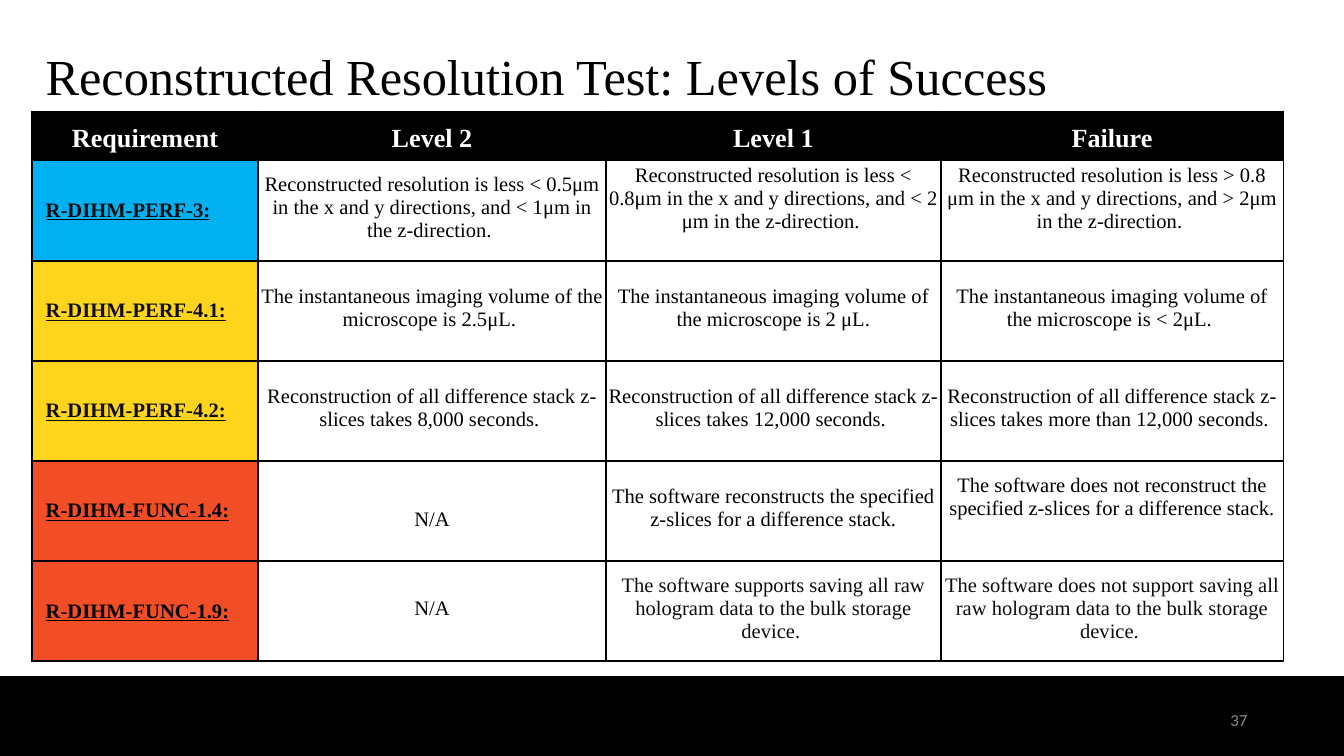
from lxml.etree import SubElement
from pptx import Presentation
from pptx.dml.color import RGBColor
from pptx.enum.shapes import MSO_SHAPE as Shape
from pptx.enum.text import MSO_ANCHOR as Anchor, PP_ALIGN as Align
from pptx.oxml.ns import qn
from pptx.util import Inches, Pt

BLACK = RGBColor(0, 0, 0)
WHITE = RGBColor(255, 255, 255)
INK = RGBColor(0x0D, 0x0D, 0x0D)
GRAY = RGBColor(0x88, 0x88, 0x88)
BLUE = RGBColor(0x00, 0xB0, 0xF0)
YELLOW = RGBColor(0xFE, 0xD4, 0x1D)
ORANGE = RGBColor(0xF1, 0x4E, 0x28)

TITLE = "Reconstructed Resolution Test: Levels of Success"
PAGE = "37"
HEADINGS = ["Requirement", "Level 2", "Level 1", "Failure"]
REQUIREMENTS = [
    ("R-DIHM-PERF-3:", BLUE, [
        "Reconstructed resolution is less < 0.5μm in the x and y directions, and < 1μm in the z-direction. ",
        "Reconstructed resolution is less < 0.8μm in the x and y directions, and < 2 μm in the z-direction. ",
        "Reconstructed resolution is less > 0.8 μm in the x and y directions, and > 2μm in the z-direction. "]),
    ("R-DIHM-PERF-4.1:", YELLOW, [
        "The instantaneous imaging volume of the microscope is 2.5μL. ",
        "The instantaneous imaging volume of the microscope is 2 μL.",
        "The instantaneous imaging volume of the microscope is < 2μL. "]),
    ("R-DIHM-PERF-4.2:", YELLOW, [
        "Reconstruction of all difference stack z-slices takes 8,000 seconds. ",
        "Reconstruction of all difference stack z-slices takes 12,000 seconds. ",
        "Reconstruction of all difference stack z-slices takes more than 12,000 seconds. "]),
    ("R-DIHM-FUNC-1.4:", ORANGE, [
        "N/A",
        "The software reconstructs the specified z-slices for a difference stack.",
        "The software does not reconstruct the specified z-slices for a difference stack."]),
    ("R-DIHM-FUNC-1.9:", ORANGE, [
        "N/A",
        "The software supports saving all raw hologram data to the bulk storage device. ",
        "The software does not support saving all raw hologram data to the bulk storage device. "]),
]
SLIDE_WIDTH, SLIDE_HEIGHT = Inches(10), Inches(5.625)
FOOTER_TOP = Inches(5.04)
COLUMN_WIDTHS = [1.68, 2.59, 2.49, 2.55]
HEADING_HEIGHT, ROW_HEIGHT = Inches(0.36), Inches(2.98) // 4
RAISED = {(1, 2): 0.14, (1, 3): 0.14, (4, 3): 0.17}
LOWERED = {(4, 1): 0.17}


def write(frame, text, size=11, color=BLACK, font="Times New Roman", bold=False,
          underline=False, align=Align.CENTER, spacing=None):
    frame.word_wrap = True
    paragraph = frame.paragraphs[0]
    paragraph.alignment = align
    paragraph.line_spacing = spacing
    run = paragraph.add_run()
    run.text = text
    run.font.name = font
    run.font.size = Pt(size)
    run.font.bold = bold
    run.font.underline = underline
    run.font.color.rgb = color


def add_label(slide, box, text, anchor, **style):
    frame = slide.shapes.add_textbox(*map(Inches, box)).text_frame
    frame.margin_left = frame.margin_right = Inches(0.1)
    frame.margin_top = frame.margin_bottom = Inches(0.1)
    frame.vertical_anchor = anchor
    write(frame, text, **style)


def format_cell(cell, fill, margins, anchor=Anchor.MIDDLE):
    cell.margin_left, cell.margin_top, cell.margin_right, cell.margin_bottom = map(Inches, margins)
    cell.vertical_anchor = anchor
    properties = cell._tc.get_or_add_tcPr()
    for side in ("a:lnL", "a:lnR", "a:lnT", "a:lnB"):
        border = SubElement(properties, qn(side), w=str(Pt(1)))
        SubElement(SubElement(border, qn("a:solidFill")), qn("a:srgbClr"), val=str(BLACK))
    cell.fill.solid()
    cell.fill.fore_color.rgb = fill


def add_levels(slide):
    height = HEADING_HEIGHT + ROW_HEIGHT * len(REQUIREMENTS)
    levels = slide.shapes.add_table(
        len(REQUIREMENTS) + 1, len(HEADINGS), Inches(0.24), Inches(0.83),
        Inches(sum(COLUMN_WIDTHS)), height).table
    for column, width in zip(levels.columns, COLUMN_WIDTHS):
        column.width = Inches(width)
    for index, row in enumerate(levels.rows):
        row.height = ROW_HEIGHT if index else HEADING_HEIGHT
    for c, heading in enumerate(HEADINGS):
        cell = levels.cell(0, c)
        format_cell(cell, BLACK, (0.01, 0.01, 0.01, 0.05), Anchor.BOTTOM)
        write(cell.text_frame, heading, size=14, color=WHITE, bold=True)
    for r, (name, color, outcomes) in enumerate(REQUIREMENTS, 1):
        cell = levels.cell(r, 0)
        format_cell(cell, color, (0.1, 0.05, 0.1, 0.05))
        write(cell.text_frame, name, color=INK if color != ORANGE else BLACK,
              bold=True, underline=True, align=Align.LEFT)
        for c, outcome in enumerate(outcomes, 1):
            cell = levels.cell(r, c)
            top = 0.01 + LOWERED.get((r, c), 0)
            bottom = 0.05 + RAISED.get((r, c), 0)
            format_cell(cell, WHITE, (0.01, top, 0.01, bottom))
            in_ink = r == len(REQUIREMENTS) and c > 1
            write(cell.text_frame, outcome, color=INK if in_ink else BLACK)


def main():
    deck = Presentation()
    deck.slide_width, deck.slide_height = SLIDE_WIDTH, SLIDE_HEIGHT
    slide = deck.slides.add_slide(deck.slide_layouts[6])

    footer = slide.shapes.add_shape(
        Shape.RECTANGLE, 0, FOOTER_TOP, SLIDE_WIDTH, SLIDE_HEIGHT - FOOTER_TOP)
    footer.shadow.inherit = False
    footer.fill.solid()
    footer.fill.fore_color.rgb = BLACK
    footer.line.color.rgb = BLACK
    footer.line.width = Pt(1)

    add_label(slide, (0.24, 0.29, 9.32, 0.63), TITLE, Anchor.TOP,
              size=27, align=Align.LEFT, spacing=0.9)
    add_label(slide, (8.78, 5.14, 0.6, 0.43), PAGE, Anchor.MIDDLE,
              size=9, color=GRAY, font="Calibri", align=Align.RIGHT)
    add_levels(slide)
    deck.save("out.pptx")


if __name__ == "__main__":
    main()
